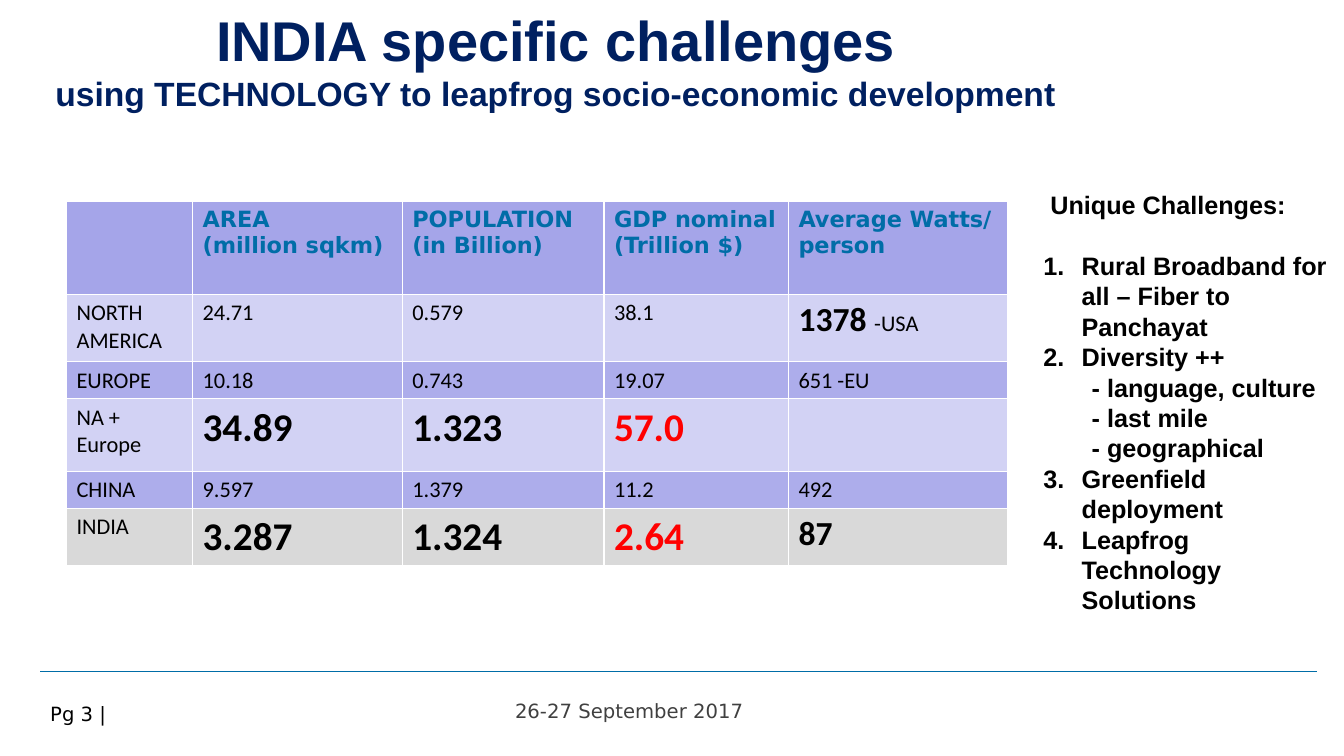
from lxml import etree
from pptx import Presentation
from pptx.dml.color import RGBColor as Rgb
from pptx.enum.shapes import MSO_CONNECTOR as Conn
from pptx.enum.text import MSO_ANCHOR as Anchor, MSO_AUTO_SIZE as Auto, PP_ALIGN as Align
from pptx.oxml.ns import qn
from pptx.util import Inches, Pt

BODY = dict(size=Pt(16), name="Calibri", bold=False, color="000000")
BIG = {**BODY, "size": Pt(28), "bold": True}
RED = {**BIG, "color": "FF0000"}
MID = {**BIG, "size": Pt(24)}
HEAD = {**BODY, "name": "DejaVu Sans", "bold": True, "color": "006DA7"}
NAVY = dict(size=Pt(40), name="Arial", bold=True, color="002060")
SIDE = {**NAVY, "size": Pt(18), "color": "000000"}
FOOT = dict(size=Pt(14), name="DejaVu Sans", bold=False, color="000000")

COLS = [1.25, 2.08, 2, 1.83, 2.17]
ROWS = [
    (0.92, "A5A5E9", HEAD, ["", "AREA\n(million sqkm)", "POPULATION\n(in Billion)",
                            "GDP nominal (Trillion $)", "Average Watts/ person"]),
    (0.67, "D2D2F4", BODY, ["NORTH AMERICA", "24.71", "0.579", "38.1",
                            [("1378 ", MID), ("-USA", BODY)]]),
    (0.36, "ADADEB", BODY, ["EUROPE", "10.18", "0.743", "19.07", "651 -EU"]),
    (0.72, "D2D2F4", BIG, [[("NA + Europe", BODY)], "34.89", "1.323", [("57.0", RED)], ""]),
    (0.36, "ADADEB", BODY, ["CHINA", "9.597", "1.379", "11.2", "492"]),
    (0.57, "D9D9D9", BIG, [[("INDIA", BODY)], "3.287", "1.324", [("2.64", RED)],
                           [("87", MID)]]),
]
TASKS = [
    ("Unique Challenges:", 0.07, None),
    ("Rural Broadband for all – Fiber to Panchayat", 0.38, 1),
    ("Diversity ++", 0.38, 1),
    ("- language, culture", 0.48, None),
    ("- last mile", 0.48, None),
    ("- geographical", 0.48, None),
    ("Greenfield deployment", 0.38, 3),
    ("Leapfrog Technology Solutions", 0.38, 3),
]


def paint(value):
    return Rgb.from_string(value)


class Deck:
    def __init__(self):
        self.prs = Presentation()
        self.prs.slide_width, self.prs.slide_height = Inches(13.33), Inches(7.5)
        self.slide = self.prs.slides.add_slide(self.prs.slide_layouts[5])

    def font(self, item, style):
        for key, value in style.items():
            if key == "color":
                item.font.color.rgb = paint(value)
            else:
                setattr(item.font, key, value)

    def run(self, para, text, style):
        run = para.add_run()
        run.text = text
        self.font(run, style)

    def title(self, box, lines):
        shape = self.slide.shapes.title
        shape.left, shape.top, shape.width, shape.height = map(Inches, box)
        frame = shape.text_frame
        frame.auto_size, frame.vertical_anchor = Auto.NONE, Anchor.MIDDLE
        for i, (text, size) in enumerate(lines):
            para = frame.add_paragraph() if i else frame.paragraphs[0]
            para.alignment, para.line_spacing = Align.CENTER, Pt(25)
            para.space_before = Pt(4 * i)
            self.run(para, text, {**NAVY, "size": Pt(size)})

    def text(self, box, text="", style=FOOT):
        frame = self.slide.shapes.add_textbox(*map(Inches, box)).text_frame
        frame.word_wrap = True
        if text:
            self.run(frame.paragraphs[0], text, style)
        return frame

    def list(self, box, items):
        frame = self.text(box)
        for i, (text, left, start) in enumerate(items):
            para = frame.add_paragraph() if i else frame.paragraphs[0]
            para.line_spacing = Pt(21.7)
            if i == 1:
                para.space_before = Pt(21.7)
            props = para._p.get_or_add_pPr()
            props.set("marL", str(Inches(left)))
            if start:
                props.set("indent", str(-Inches(left)))
                num = etree.SubElement(props, qn("a:buAutoNum"), type="arabicPeriod")
                if start > 1:
                    num.set("startAt", str(start))
            self.font(para, SIDE)
            self.run(para, text, SIDE)

    def table(self, left, top, cols, rows):
        size = map(Inches, (left, top, sum(cols), sum(row[0] for row in rows)))
        grid = self.slide.shapes.add_table(len(rows), len(cols), *size).table
        for col, width in zip(grid.columns, cols):
            col.width = Inches(width)
        for line, (high, fill, style, texts) in zip(grid.rows, rows):
            line.height = Inches(high)
            for cell, text in zip(line.cells, texts):
                cell.fill.solid()
                cell.fill.fore_color.rgb = paint(fill)
                if isinstance(text, list):
                    for part, look in text:
                        self.run(cell.text_frame.paragraphs[0], part, look)
                    continue
                cell.text = text
                for para in cell.text_frame.paragraphs:
                    for run in para.runs:
                        self.font(run, style)

    def line(self, start, end, color):
        line = self.slide.shapes.add_connector(Conn.STRAIGHT, *map(Inches, start + end))
        line.line.color.rgb, line.line.width = paint(color), Pt(0.75)
        etree.SubElement(line._element.spPr, qn("a:effectLst"))


def main():
    deck = Deck()
    deck.line((0.4, 6.66), (13.06, 6.66), "006DA7")
    deck.text((5.01, 6.88, 3.86, 0.34), "26-27 September 2017", {**FOOT, "color": "404040"})
    deck.table(0.66, 2, COLS, ROWS)
    deck.title((0.03, 0.27, 10.96, 0.96),
               [("INDIA specific challenges", 40),
                ("using TECHNOLOGY to leapfrog socio-economic development", 24)])
    deck.list((10.25, 1.83, 3.04, 4.95), TASKS)
    deck.text((0.4, 6.91, 2.76, 0.39), "Pg 3 |")
    deck.prs.save("out.pptx")


if __name__ == "__main__":
    main()
